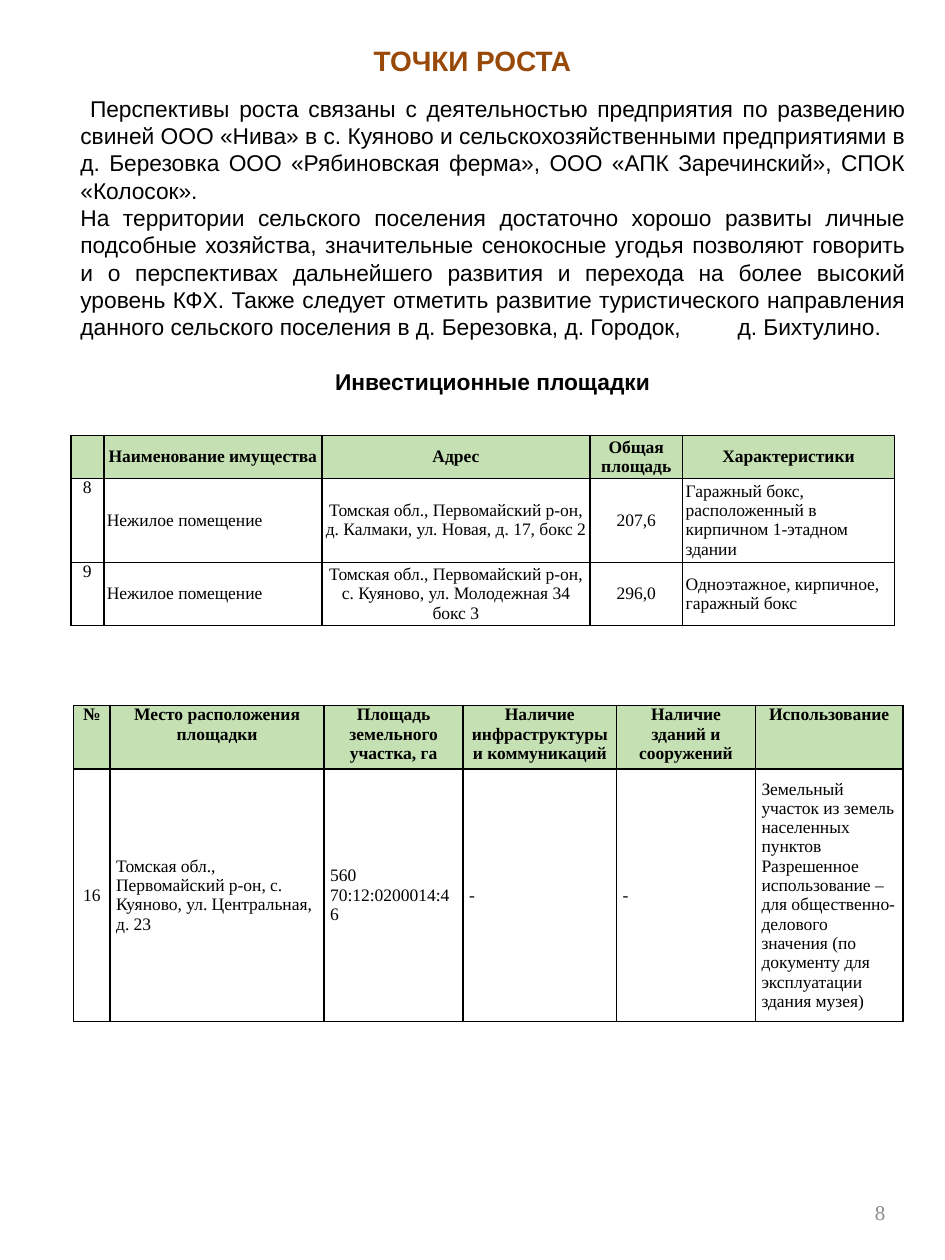
"""Build the growth points slide with its two tables of investment sites."""
from dataclasses import dataclass

from pptx import Presentation
from pptx.dml.color import RGBColor
from pptx.enum.text import MSO_ANCHOR, MSO_AUTO_SIZE, PP_ALIGN
from pptx.oxml.ns import qn
from pptx.util import Pt
from lxml import etree

LEFT, CENTER, RIGHT, JUSTIFY = PP_ALIGN.LEFT, PP_ALIGN.CENTER, PP_ALIGN.RIGHT, PP_ALIGN.JUSTIFY
TOP, MIDDLE, BOTTOM = MSO_ANCHOR.TOP, MSO_ANCHOR.MIDDLE, MSO_ANCHOR.BOTTOM
NO_AUTOFIT = MSO_AUTO_SIZE.NONE
TITLE_ONLY = 5
SANS, SERIF = "Arial", "Times New Roman"
COLORS = {"title": "984807", "text": "000000", "number": "8C8C8C",
          "header": "C5E0B3", "cell": "FFFFFF", "border": "000000"}


@dataclass
class SiteTable:
    left: float
    top: float
    widths: list[float]
    heights: list[float]
    margin: float
    header_anchor: MSO_ANCHOR
    number_anchor: MSO_ANCHOR
    centered: set[int]
    rows: list[list[str]]


PREMISES = SiteTable(
    40.5, 248.8, [18.8, 124.6, 153.2, 53, 121], [24.5, 48, 36], 1.8, MIDDLE, TOP, {0, 2, 3},
    [["", "Наименование имущества", "Адрес", "Общая площадь", "Характеристики"],
     ["8", "Нежилое помещение",
      "Томская обл., Первомайский р-он, д. Калмаки, ул. Новая, д. 17, бокс 2",
      "207,6", "Гаражный бокс, расположенный в кирпичном 1-этадном здании"],
     ["9", "Нежилое помещение",
      "Томская обл., Первомайский р-он, с. Куяново, ул. Молодежная 34 бокс 3",
      "296,0", "Одноэтажное, кирпичное, гаражный бокс"]])

LAND = SiteTable(
    42, 403, [20.9, 122.3, 79.4, 87.7, 79.4, 84.3], [36.5, 144], 3.5, TOP, MIDDLE, {0},
    [["№", "Место расположения площадки", "Площадь земельного участка, га",
      "Наличие инфраструктуры и коммуникаций", "Наличие зданий и сооружений", "Использование"],
     ["16", "Томская обл., Первомайский р-он, с. Куяново, ул. Центральная, д. 23",
      "560\n70:12:0200014:46", "-", "-",
      "Земельный участок из земель населенных пунктов Разрешенное использование – "
      "для общественно-делового значения (по документу для эксплуатации здания музея)"]])

PROSPECTS = (
    "Перспективы роста связаны с деятельностью предприятия по разведению свиней "
    "ООО «Нива» в с. Куяново и сельскохозяйственными предприятиями в д. Березовка "
    "ООО «Рябиновская ферма», ООО «АПК Заречинский», СПОК «Колосок».")
TERRITORY = (
    "На территории сельского поселения достаточно хорошо развиты личные подсобные "
    "хозяйства, значительные сенокосные угодья позволяют говорить и о перспективах "
    "дальнейшего развития и перехода на более высокий уровень КФХ. Также следует отметить "
    "развитие туристического направления данного сельского поселения в д. Березовка, "
    "д. Городок,\tд. Бихтулино.")


def style(paragraph, font: str, size: float, color: str, align: PP_ALIGN, bold: bool = False) -> None:
    """Set the font and alignment of a paragraph."""
    paragraph.alignment = align
    paragraph.font.name = font
    paragraph.font.size = Pt(size)
    paragraph.font.bold = bold
    paragraph.font.color.rgb = RGBColor.from_string(COLORS[color])


def add_text_frame(slide, left: float, top: float, width: float, height: float):
    """Add a wrapping text box and return its text frame."""
    frame = slide.shapes.add_textbox(Pt(left), Pt(top), Pt(width), Pt(height)).text_frame
    frame.word_wrap = True
    return frame


def add_borders(cell) -> None:
    """Draw a one-point line on all sides of a cell."""
    properties = cell._tc.get_or_add_tcPr()
    for side in ("a:lnL", "a:lnR", "a:lnT", "a:lnB"):
        line = etree.SubElement(properties, qn(side), w=str(Pt(1)))
        fill = etree.SubElement(line, qn("a:solidFill"))
        etree.SubElement(fill, qn("a:srgbClr"), val=COLORS["border"])


def add_site_table(slide, sites: SiteTable) -> None:
    """Draw one table of sites."""
    table = slide.shapes.add_table(
        len(sites.rows), len(sites.widths), Pt(sites.left), Pt(sites.top),
        Pt(sum(sites.widths)), Pt(sum(sites.heights))).table
    for column, width in zip(table.columns, sites.widths):
        column.width = Pt(width)
    for r, (values, height) in enumerate(zip(sites.rows, sites.heights)):
        table.rows[r].height = Pt(height)
        for c, value in enumerate(values):
            cell = table.cell(r, c)
            is_header = r == 0
            add_borders(cell)
            cell.fill.solid()
            cell.fill.fore_color.rgb = RGBColor.from_string(COLORS["header" if is_header else "cell"])
            cell.margin_left = cell.margin_right = Pt(sites.margin)
            cell.margin_top = cell.margin_bottom = 0
            cell.vertical_anchor = (sites.header_anchor if is_header
                                    else sites.number_anchor if c == 0 else MIDDLE)
            cell.text = value
            align = CENTER if is_header or c in sites.centered else LEFT
            for paragraph in cell.text_frame.paragraphs:
                style(paragraph, SERIF, 10, "text", align, is_header)


def add_overview(slide) -> None:
    """Write the two paragraphs on prospects and the heading of the tables."""
    frame = add_text_frame(slide, 38.9, 50.4, 484.9, 196.5)
    frame.text = "\n".join([PROSPECTS, TERRITORY, "Инвестиционные площадки"])
    prospects, territory, heading = frame.paragraphs
    tabs = etree.SubElement(territory._p.get_or_add_pPr(), qn("a:tabLst"))
    etree.SubElement(tabs, qn("a:tab"), pos=str(Pt(375.5)), algn="l")
    for paragraph in (prospects, territory):
        style(paragraph, SANS, 13, "text", JUSTIFY)
    prospects._p.pPr.set("indent", str(Pt(5.5)))
    style(heading, SANS, 13, "text", CENTER, True)
    heading.space_before = Pt(15.6)


def add_title(slide) -> None:
    """Place and fill the title."""
    title = slide.shapes.title
    title.left, title.top, title.width, title.height = 0, Pt(21.2), Pt(540), Pt(26.6)
    title.text_frame.text = "ТОЧКИ РОСТА"
    title.text_frame.auto_size = NO_AUTOFIT
    title.text_frame.vertical_anchor = MIDDLE
    style(title.text_frame.paragraphs[0], SANS, 16, "title", CENTER, True)


def main() -> None:
    """Build and save the slide."""
    deck = Presentation()
    deck.slide_width, deck.slide_height = Pt(540), Pt(720)
    slide = deck.slides.add_slide(deck.slide_layouts[TITLE_ONLY])
    add_title(slide)
    add_overview(slide)
    page_number = add_text_frame(slide, 387, 655.2, 126, 48.2)
    page_number.vertical_anchor = BOTTOM
    page_number.text = "8"
    style(page_number.paragraphs[0], SERIF, 12, "number", RIGHT)
    for sites in (PREMISES, LAND):
        add_site_table(slide, sites)
    deck.save("out.pptx")


if __name__ == "__main__":
    main()
